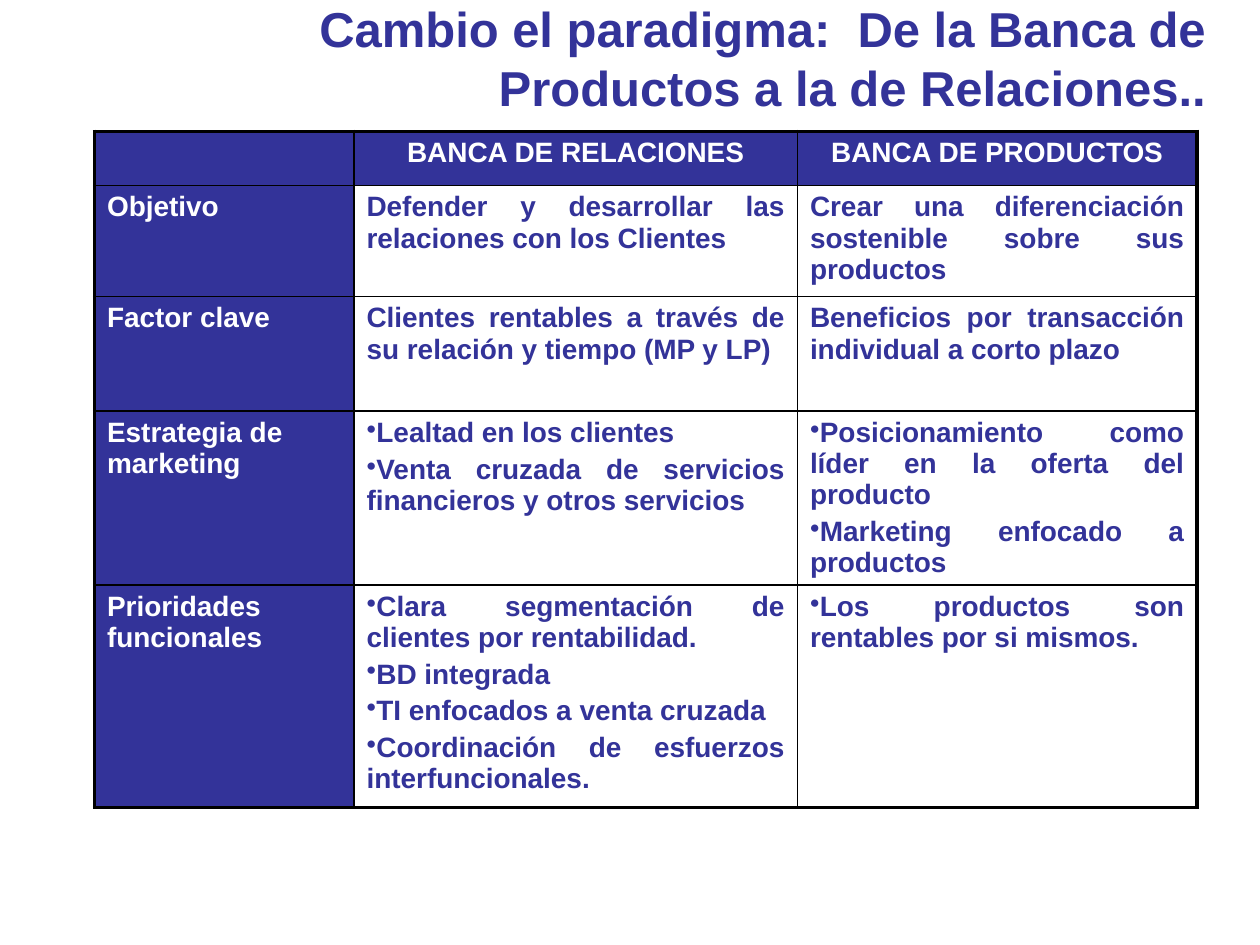
from pptx import Presentation
from pptx.dml.color import RGBColor
from pptx.enum.text import MSO_ANCHOR, MSO_AUTO_SIZE, PP_ALIGN
from pptx.oxml.ns import qn
from pptx.util import Pt
from lxml import etree

LEFT, CENTER, RIGHT, JUSTIFY = PP_ALIGN.LEFT, PP_ALIGN.CENTER, PP_ALIGN.RIGHT, PP_ALIGN.JUSTIFY
MIDDLE = MSO_ANCHOR.MIDDLE
NO_FIT = MSO_AUTO_SIZE.NONE

BLUE, WHITE, BLACK = "333399", "FFFFFF", "000000"
THIN, THICK = 1, 2.25

TITLE = "Cambio el paradigma:  De la Banca de Productos a la de Relaciones.."
ROWS = [
    ("", "BANCA DE RELACIONES", "BANCA DE PRODUCTOS"),
    ("Objetivo",
     "Defender y desarrollar las relaciones con los Clientes",
     "Crear una diferenciación sostenible sobre sus productos"),
    ("Factor clave",
     "Clientes rentables a través de su relación y tiempo (MP y LP)",
     "Beneficios por transacción individual a corto plazo"),
    ("Estrategia de marketing",
     ["Lealtad en los clientes",
      "Venta cruzada de servicios financieros y otros servicios"],
     ["Posicionamiento como líder en la oferta del producto",
      "Marketing enfocado a productos"]),
    ("Prioridades funcionales",
     ["Clara segmentación de clientes por rentabilidad.",
      "BD integrada",
      "TI enfocados a venta cruzada",
      "Coordinación de esfuerzos interfuncionales."],
     ["Los productos son rentables por si mismos."]),
]
COL_WIDTHS = [148.3, 253.4, 228.3]
ROW_HEIGHTS = [31, 63.4, 65.5, 91.4, 127.4]


def rgb(value):
    return RGBColor.from_string(value)


def write(tf, text, size=16, color=BLUE, align=LEFT):
    bulleted = isinstance(text, list)
    for i, line in enumerate(text if bulleted else [text]):
        p = tf.add_paragraph() if i else tf.paragraphs[0]
        p.alignment = align
        if i:
            p.space_before = Pt(size * 0.2)
        if bulleted:
            pPr = p._p.get_or_add_pPr()
            pPr.set("marL", "0")
            pPr.set("indent", "0")
            etree.SubElement(pPr, qn("a:buChar"), char="•")
        if line:
            r = p.add_run()
            r.text = line
            r.font.name = "Arial"
            r.font.size = Pt(size)
            r.font.bold = True
            r.font.color.rgb = rgb(color)


def set_border(cell, side, width):
    tcPr = cell._tc.get_or_add_tcPr()
    ln = etree.SubElement(tcPr, qn("a:ln" + side), w=str(Pt(width)))
    fill = etree.SubElement(ln, qn("a:solidFill"))
    etree.SubElement(fill, qn("a:srgbClr"), val=BLACK)


def main():
    prs = Presentation()
    prs.slide_width, prs.slide_height = Pt(720), Pt(540)
    s = prs.slides.add_slide(prs.slide_layouts[5])

    title = s.shapes.title
    title.left, title.top, title.width, title.height = Pt(54), Pt(5), Pt(642.2), Pt(55.4)
    tf = title.text_frame
    tf.auto_size = NO_FIT
    tf.word_wrap = True
    tf.vertical_anchor = MIDDLE
    write(tf, TITLE, size=28, align=RIGHT)

    last_row, last_col = len(ROWS) - 1, len(COL_WIDTHS) - 1
    table = s.shapes.add_table(len(ROWS), len(COL_WIDTHS), Pt(54), Pt(75),
                               Pt(sum(COL_WIDTHS)), Pt(sum(ROW_HEIGHTS))).table
    for column, width in zip(table.columns, COL_WIDTHS):
        column.width = Pt(width)
    for row, height in zip(table.rows, ROW_HEIGHTS):
        row.height = Pt(height)

    for i, texts in enumerate(ROWS):
        for j, text in enumerate(texts):
            cell = table.cell(i, j)
            outer = {"L": j == 0, "R": j == last_col, "T": i == 0, "B": i == last_row}
            for side, is_outer in outer.items():
                set_border(cell, side, THICK if is_outer else THIN)
            heading = i == 0 or j == 0
            cell.fill.solid()
            cell.fill.fore_color.rgb = rgb(BLUE if heading else WHITE)
            align = CENTER if i == 0 else LEFT if j == 0 else JUSTIFY
            write(cell.text_frame, text, color=WHITE if heading else BLUE, align=align)

    prs.save("out.pptx")


if __name__ == "__main__":
    main()
